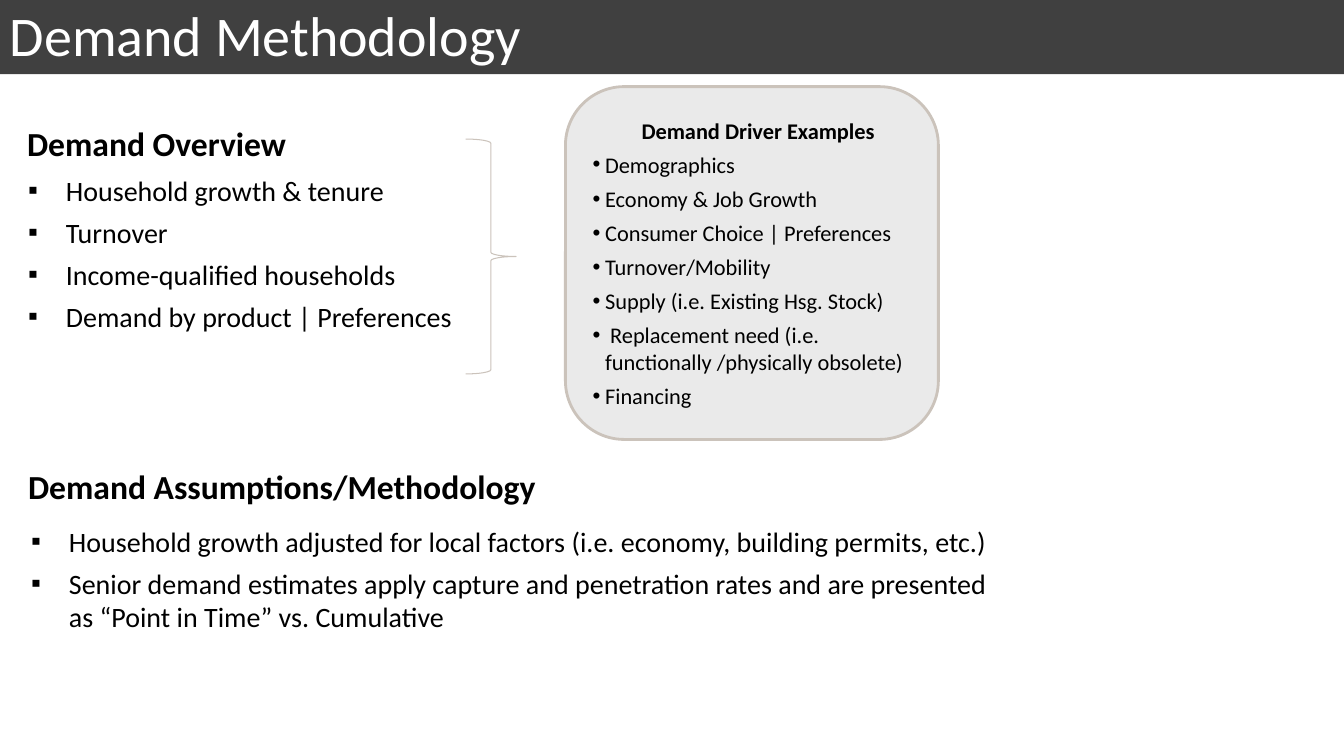
"""Build the Demand Methodology slide."""
from lxml import etree
from pptx import Presentation
from pptx import util as u
from pptx.dml.color import RGBColor
from pptx.enum import shapes, text
from pptx.oxml.ns import qn

TITLE = "Demand Methodology"
OVERVIEW = ["Household growth & tenure", "Turnover", "Income-qualified households",
            "Demand by product | Preferences"]
DRIVERS_HEADING = "Demand Driver Examples"
DRIVERS = ["Demographics", "Economy & Job Growth", "Consumer Choice | Preferences",
           "Turnover/Mobility", "Supply (i.e. Existing Hsg. Stock)",
           " Replacement need (i.e. functionally /physically obsolete)", "Financing"]
ASSUMPTIONS = [
    "Household growth adjusted for local factors (i.e. economy, building permits, etc.)",
    "Senior demand estimates apply capture and penetration rates and are presented "
    "as “Point in Time” vs. Cumulative"]

TITLE_STYLE = {"size": 40, "color": "FFFFFF"}
HEADING = {"size": 24, "bold": True}
LIST = {"size": 20, "before": 6, "bullet": "▪", "indent": 27}
DRIVER_HEADING = {"size": 16, "bold": True, "after": 1.2, "margin": 9,
                  "align": text.PP_ALIGN.CENTER}
DRIVER = {"size": 16, "before": 4, "after": 1.2, "bullet": "•", "indent": 9}

TEXT_BOXES = [
    ((12.24, 84.24, 378, 36.72), [("Demand Overview", HEADING)]),
    ((12.96, 120.24, 340.56, 122.4), [(line, LIST) for line in OVERVIEW]),
    ((12.96, 329.04, 378, 36.72), [("Demand Assumptions/Methodology", HEADING)]),
    ((15.12, 370.8, 711.36, 85.68), [(line, LIST) for line in ASSUMPTIONS]),
]


def color(value):
    return RGBColor.from_string(value)


def points(box):
    return [u.Pt(length) for length in box]


def write(shape, paragraphs, anchor=text.MSO_ANCHOR.TOP):
    frame = shape.text_frame
    frame.word_wrap = True
    frame.vertical_anchor = anchor
    for index, (line, style) in enumerate(paragraphs):
        paragraph = frame.add_paragraph() if index else frame.paragraphs[0]
        properties = paragraph._p.get_or_add_pPr()
        indent = style.get("indent", 0)
        properties.set("marL", str(u.Pt(style.get("margin", indent))))
        properties.set("indent", str(-u.Pt(indent)))
        if "bullet" in style:
            etree.SubElement(properties, qn("a:buFont")).set("typeface", "Arial")
            etree.SubElement(properties, qn("a:buChar")).set("char", style["bullet"])
        layout = {"alignment": style.get("align", text.PP_ALIGN.LEFT),
                  "space_before": u.Pt(style.get("before", 0) if index else 0),
                  "space_after": u.Pt(style.get("after", 0))}
        for name, value in layout.items():
            setattr(paragraph, name, value)
        run = paragraph.add_run()
        run.text = line
        font = {"name": "Calibri", "size": u.Pt(style["size"]),
                "bold": style.get("bold", False)}
        for name, value in font.items():
            setattr(run.font, name, value)
        run.font.color.rgb = color(style.get("color", "000000"))


def add_shape(slide, kind, box, fill=None, line=None, width=0):
    shape = slide.shapes.add_shape(kind, *points(box))
    shape.shadow.inherit = False
    if fill:
        shape.fill.solid()
        shape.fill.fore_color.rgb = color(fill)
    else:
        shape.fill.background()
    if line:
        shape.line.color.rgb = color(line)
        shape.line.width = u.Pt(width)
    else:
        shape.line.fill.background()
    return shape


def main():
    presentation = Presentation()
    presentation.slide_width, presentation.slide_height = points((960, 540))
    slide = presentation.slides.add_slide(presentation.slide_layouts[6])
    kinds = shapes.MSO_SHAPE

    title_bar = add_shape(slide, kinds.RECTANGLE, (0, -2.88, 960, 55.8), "404040")
    write(title_bar, [(TITLE, TITLE_STYLE)])
    for box, paragraphs in TEXT_BOXES:
        write(slide.shapes.add_textbox(*points(box)), paragraphs)
    add_shape(slide, kinds.RIGHT_BRACE, (332.64, 99.36, 36, 167.76), line="CBC3BB", width=0.75)
    drivers = add_shape(slide, kinds.ROUNDED_RECTANGLE, (403.92, 61.92, 266.4, 252),
                        "EAEAEA", "CBC3BB", 2)
    write(drivers, [(DRIVERS_HEADING, DRIVER_HEADING)] + [(line, DRIVER) for line in DRIVERS],
          text.MSO_ANCHOR.MIDDLE)
    presentation.save("out.pptx")


if __name__ == "__main__":
    main()
